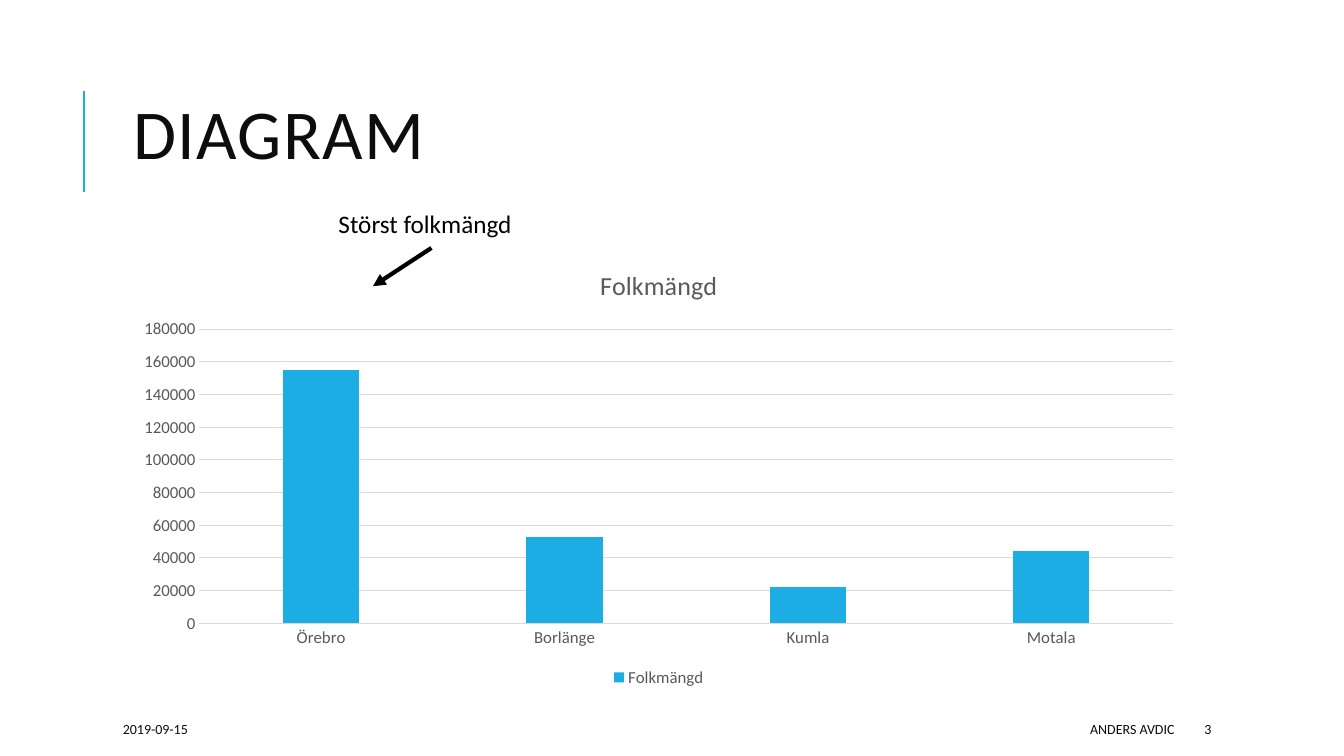
from dataclasses import dataclass

from lxml.etree import SubElement
from pptx import Presentation
from pptx.chart.data import CategoryChartData
from pptx.dml.color import RGBColor
from pptx.enum.chart import XL_CHART_TYPE, XL_LEGEND_POSITION, XL_TICK_MARK
from pptx.enum.shapes import MSO_CONNECTOR
from pptx.enum.text import MSO_ANCHOR, MSO_AUTO_SIZE, PP_ALIGN
from pptx.oxml.ns import qn
from pptx.shapes.connector import Connector
from pptx.slide import Slide
from pptx.text.text import Font, TextFrame
from pptx.util import Pt


@dataclass(frozen=True)
class Theme:
    font: str = "Calibri"
    accent: str = "1CADE4"
    ink: str = "0D0D0D"
    black: str = "000000"
    chart_text: str = "595959"
    grid: str = "D9D9D9"
    title_size: float = 50
    chart_title_size: float = 18.6
    callout_size: float = 18
    axis_size: float = 12
    footer_size: float = 10


@dataclass(frozen=True)
class Label:
    text: str
    left: float
    top: float
    width: float
    height: float
    size: float
    color: str
    align: PP_ALIGN = PP_ALIGN.LEFT
    anchor: MSO_ANCHOR = MSO_ANCHOR.MIDDLE


@dataclass(frozen=True)
class Line:
    start: tuple[float, float]
    end: tuple[float, float]
    color: str
    width: float
    arrow: bool = False


THEME = Theme()
CONTENT_LEFT, CONTENT_WIDTH = 87.84, 765.36
FOOTER_TOP, FOOTER_HEIGHT = 509.76, 21.6

POPULATION = {"Örebro": 155000, "Borlänge": 53000, "Kumla": 22000, "Motala": 44000}

FOOTERS = [
    Label(text, left, FOOTER_TOP, width, FOOTER_HEIGHT, THEME.footer_size, THEME.ink, align)
    for text, left, width, align in (
        ("2019-09-15", 80.64, 169.92, PP_ALIGN.LEFT),
        ("ANDERS AVDIC", 381.6, 464.4, PP_ALIGN.RIGHT),
        ("3", 853.2, 76.32, PP_ALIGN.LEFT),
    )
]
CALLOUT = Label("Störst folkmängd", 234.72, 145.44, 146.88, 31.68,
                THEME.callout_size, THEME.black, anchor=MSO_ANCHOR.TOP)
TITLE_RULE = Line((60, 136.8), (60, 64.8), THEME.accent, 1.5)
CALLOUT_ARROW = Line((308.16, 177.12), (266.4, 204.48), THEME.black, 3, arrow=True)


def style_font(font: Font, size: float, color: str) -> None:
    font.name = THEME.font
    font.size = Pt(size)
    font.bold = False
    font.color.rgb = RGBColor.from_string(color)


def write_text(frame: TextFrame, text: str, *, size: float, color: str,
               align: PP_ALIGN = PP_ALIGN.LEFT, anchor: MSO_ANCHOR = MSO_ANCHOR.MIDDLE,
               line_spacing: float = 1.0, tracking: float = 0) -> None:
    """Fill a frame with one formatted paragraph; tracking is in points."""
    frame.word_wrap = True
    frame.auto_size = MSO_AUTO_SIZE.NONE
    frame.vertical_anchor = anchor
    para = frame.paragraphs[0]
    para.alignment = align
    para.line_spacing = line_spacing
    span = para.add_run()
    span.text = text
    style_font(span.font, size, color)
    if tracking:
        span.font._element.set("spc", str(round(tracking * 100)))


def add_title(page: Slide, text: str) -> None:
    title = page.shapes.title
    title.left, title.top = Pt(CONTENT_LEFT), Pt(40.32)
    title.width, title.height = Pt(CONTENT_WIDTH), Pt(118.08)
    write_text(title.text_frame, text, size=THEME.title_size, color=THEME.ink,
               line_spacing=0.8, tracking=1)


def add_label(page: Slide, label: Label):
    box = page.shapes.add_textbox(Pt(label.left), Pt(label.top), Pt(label.width), Pt(label.height))
    write_text(box.text_frame, label.text, size=label.size, color=label.color,
               align=label.align, anchor=label.anchor)
    return box


def add_line(page: Slide, line: Line) -> Connector:
    points = [Pt(value) for value in (*line.start, *line.end)]
    connector = page.shapes.add_connector(MSO_CONNECTOR.STRAIGHT, *points)
    connector.line.color.rgb = RGBColor.from_string(line.color)
    connector.line.width = Pt(line.width)
    if line.arrow:
        SubElement(connector.line._get_or_add_ln(), qn("a:tailEnd"), type="triangle")
    SubElement(connector._element.spPr, qn("a:effectLst"))
    return connector


def add_population_chart(page: Slide) -> None:
    data = CategoryChartData()
    data.categories = list(POPULATION)
    data.add_series("Folkmängd", list(POPULATION.values()))
    chart = page.shapes.add_chart(XL_CHART_TYPE.COLUMN_CLUSTERED, Pt(CONTENT_LEFT), Pt(177.12),
                                  Pt(CONTENT_WIDTH), Pt(316.8), data).chart
    style_font(chart.font, THEME.axis_size, THEME.chart_text)

    chart.has_title = True
    span = chart.chart_title.text_frame.paragraphs[0].add_run()
    span.text = "Folkmängd"
    style_font(span.font, THEME.chart_title_size, THEME.chart_text)
    chart.chart_title.include_in_layout = False

    chart.has_legend = True
    chart.legend.position = XL_LEGEND_POSITION.BOTTOM
    chart.legend.include_in_layout = False
    style_font(chart.legend.font, THEME.axis_size, THEME.chart_text)

    for axis in (chart.category_axis, chart.value_axis):
        axis.major_tick_mark = axis.minor_tick_mark = XL_TICK_MARK.NONE
        style_font(axis.tick_labels.font, THEME.axis_size, THEME.chart_text)
    chart.value_axis.format.line.fill.background()
    chart.value_axis.has_major_gridlines = True
    for line in (chart.category_axis.format.line, chart.value_axis.major_gridlines.format.line):
        line.color.rgb = RGBColor.from_string(THEME.grid)
        line.width = Pt(0.75)

    plot = chart.plots[0]
    plot.vary_by_categories = False
    plot.gap_width, plot.overlap = 219, -27
    fill = plot.series[0].format.fill
    fill.solid()
    fill.fore_color.rgb = RGBColor.from_string(THEME.accent)


def main() -> None:
    deck = Presentation()
    deck.slide_width, deck.slide_height = Pt(960), Pt(540)
    page = deck.slides.add_slide(deck.slide_layouts.get_by_name("Title Only"))
    add_line(page, TITLE_RULE)
    add_title(page, "DIAGRAM")
    add_population_chart(page)
    for footer in FOOTERS:
        add_label(page, footer)
    callout = add_label(page, CALLOUT)
    add_line(page, CALLOUT_ARROW).begin_connect(callout, 2)
    deck.save("out.pptx")


if __name__ == "__main__":
    main()
